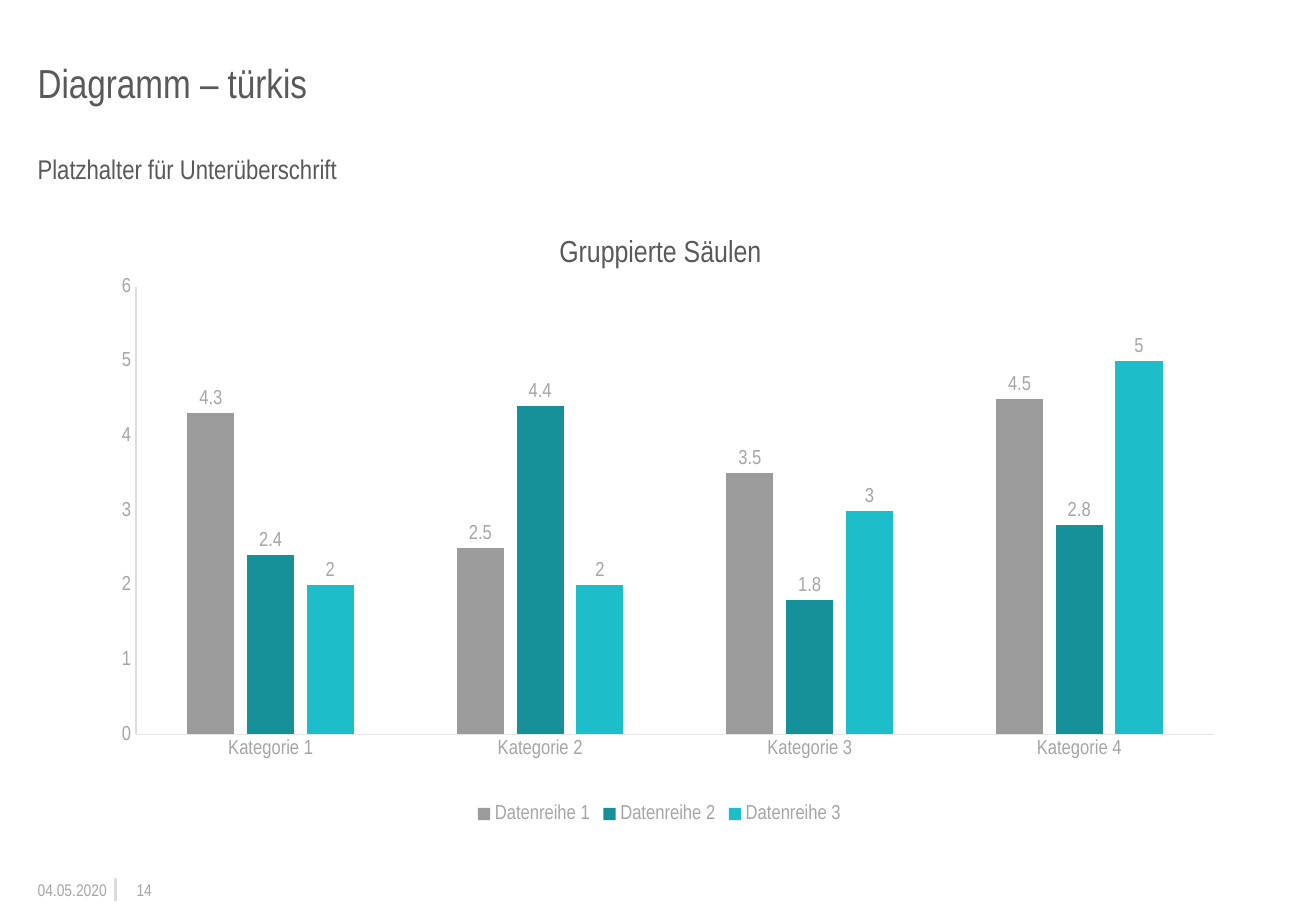
from dataclasses import dataclass

from pptx import Presentation
from pptx import util as u
from pptx.chart.data import CategoryChartData
from pptx.dml.color import RGBColor
from pptx.enum import chart as ch, shapes, text
from pptx.oxml import parse_xml
from pptx.oxml.ns import nsdecls, qn

FONT = "Arial Narrow"
DARK, GREY, RULE, AXIS = "595959", "A5A5A5", "DCDCDC", "E6E6E6"
WIDTH, HEIGHT = u.Inches(10.83), u.Inches(7.5)
LEFT, CONTENT_W = 2.86, 94.5
FOOT_Y, FOOT_H = 96.53, 2.27


@dataclass
class Box:
    """Position and size in percent of the slide."""
    x: float
    y: float
    w: float
    h: float

    def emu(self) -> tuple[int, int, int, int]:
        """Return left, top, width and height in EMU."""
        return (int(WIDTH * self.x / 100), int(HEIGHT * self.y / 100),
                int(WIDTH * self.w / 100), int(HEIGHT * self.h / 100))


@dataclass
class Label:
    """A line of text on the slide."""
    content: str
    box: Box
    size: int
    color: str
    align: text.PP_ALIGN = text.PP_ALIGN.LEFT
    anchor: text.MSO_ANCHOR = text.MSO_ANCHOR.TOP
    wrap: bool = True
    spacing: float = 1.0


@dataclass
class Series:
    """A named column series with its colour."""
    name: str
    values: tuple[float, ...]
    color: str


LABELS = [
    Label("Diagramm – türkis", Box(LEFT, 6.93, CONTENT_W, 9.73), 24, DARK, spacing=0.9),
    Label("Platzhalter für Unterüberschrift", Box(LEFT, 16.8, CONTENT_W, 4.8), 16, DARK),
    Label("04.05.2020", Box(LEFT, FOOT_Y, 5.26, FOOT_H), 10, GREY,
          anchor=text.MSO_ANCHOR.MIDDLE, wrap=False),
    Label("14", Box(9.42, FOOT_Y, 2.12, FOOT_H), 10, GREY, text.PP_ALIGN.RIGHT,
          text.MSO_ANCHOR.MIDDLE, False),
]
CATEGORIES = [f"Kategorie {n}" for n in range(1, 5)]
SERIES = [
    Series("Datenreihe 1", (4.3, 2.5, 3.5, 4.5), "9B9B9B"),
    Series("Datenreihe 2", (2.4, 4.4, 1.8, 2.8), "169199"),
    Series("Datenreihe 3", (2, 2, 3, 5), "1DBDC9"),
]


def rgb(color: str) -> RGBColor:
    """Convert a hex string to a colour."""
    return RGBColor.from_string(color)


def style(font, size: int, color: str) -> None:
    """Apply the slide font in a size and colour."""
    font.name, font.size, font.bold = FONT, u.Pt(size), False
    font.color.rgb = rgb(color)


def add_label(s, label: Label) -> None:
    """Draw a text box without insets."""
    tf = s.shapes.add_textbox(*label.box.emu()).text_frame
    tf.margin_left = tf.margin_right = tf.margin_top = tf.margin_bottom = 0
    tf.word_wrap, tf.vertical_anchor = label.wrap, label.anchor
    tf.text = label.content
    p = tf.paragraphs[0]
    p.alignment, p.line_spacing = label.align, label.spacing
    style(p.runs[0].font, label.size, label.color)


def add_rule(s, box: Box) -> None:
    """Draw the round-capped footer divider."""
    x, y, w, h = box.emu()
    line = s.shapes.add_connector(shapes.MSO_CONNECTOR.STRAIGHT, x, y, x + w, y + h)
    line.line.color.rgb, line.line.width = rgb(RULE), u.Pt(2)
    sp_pr = line._element.spPr
    sp_pr.find(qn("a:ln")).set("cap", "rnd")
    sp_pr.append(parse_xml(f"<a:effectLst {nsdecls('a')}/>"))


def make_layout(**percent: float):
    """Build a manual chart layout from percent values."""
    target = '<c:layoutTarget val="inner"/>' if "w" in percent else ""
    modes = "".join(f'<c:{k}Mode val="edge"/>' for k in "xy")
    sizes = "".join(f'<c:{k} val="{v / 100:.3f}"/>' for k, v in percent.items())
    return parse_xml(f"<c:layout {nsdecls('c')}><c:manualLayout>{target}{modes}{sizes}"
                     "</c:manualLayout></c:layout>")


def style_axis(axis, color: str) -> None:
    """Give an axis its line and labels, without ticks or gridlines."""
    axis.has_major_gridlines = False
    axis.major_tick_mark = axis.minor_tick_mark = ch.XL_TICK_MARK.NONE
    axis.format.line.color.rgb, axis.format.line.width = rgb(color), u.Pt(0.75)
    style(axis.tick_labels.font, 12, GREY)


def add_columns(s, box: Box) -> None:
    """Draw the clustered column chart."""
    data = CategoryChartData()
    data.categories = CATEGORIES
    for row in SERIES:
        data.add_series(row.name, row.values)
    chart = s.shapes.add_chart(ch.XL_CHART_TYPE.COLUMN_CLUSTERED, *box.emu(), data).chart
    style(chart.font, 10, DARK)

    chart.has_title = True
    tf = chart.chart_title.text_frame
    tf.text = "Gruppierte Säulen"
    style(tf.paragraphs[0].runs[0].font, 18, DARK)
    title = chart.chart_title._element
    area = chart._chartSpace.chart.plotArea
    for parent in (title, area):
        for old in parent.findall(qn("c:layout")):
            parent.remove(old)
    title.find(qn("c:tx")).addnext(make_layout(x=41.5, y=3.3))
    area.insert(0, make_layout(x=7.9, y=12.2, w=86.7, h=72.6))

    chart.has_legend = True
    chart.legend.position = ch.XL_LEGEND_POSITION.BOTTOM
    chart.legend.include_in_layout = False
    style(chart.legend.font, 12, GREY)
    style_axis(chart.category_axis, AXIS)
    style_axis(chart.value_axis, RULE)
    chart.value_axis.minimum_scale, chart.value_axis.maximum_scale = 0, 6
    chart.value_axis.major_unit = 1

    plot = chart.plots[0]
    plot.gap_width, plot.overlap, plot.vary_by_categories = 219, -27, False
    for series, row in zip(plot.series, SERIES):
        series.format.fill.solid()
        series.format.fill.fore_color.rgb = rgb(row.color)
        labels = series.data_labels
        labels.show_value, labels.position = True, ch.XL_LABEL_POSITION.OUTSIDE_END
        style(labels.font, 12, GREY)


def main() -> None:
    """Build and save the slide."""
    prs = Presentation()
    prs.slide_width, prs.slide_height = WIDTH, HEIGHT
    s = prs.slides.add_slide(prs.slide_layouts[6])
    add_rule(s, Box(8.77, FOOT_Y, 0, FOOT_H))
    for label in LABELS:
        add_label(s, label)
    add_columns(s, Box(LEFT, 23.2, CONTENT_W, 67.73))
    prs.save("out.pptx")


if __name__ == "__main__":
    main()
